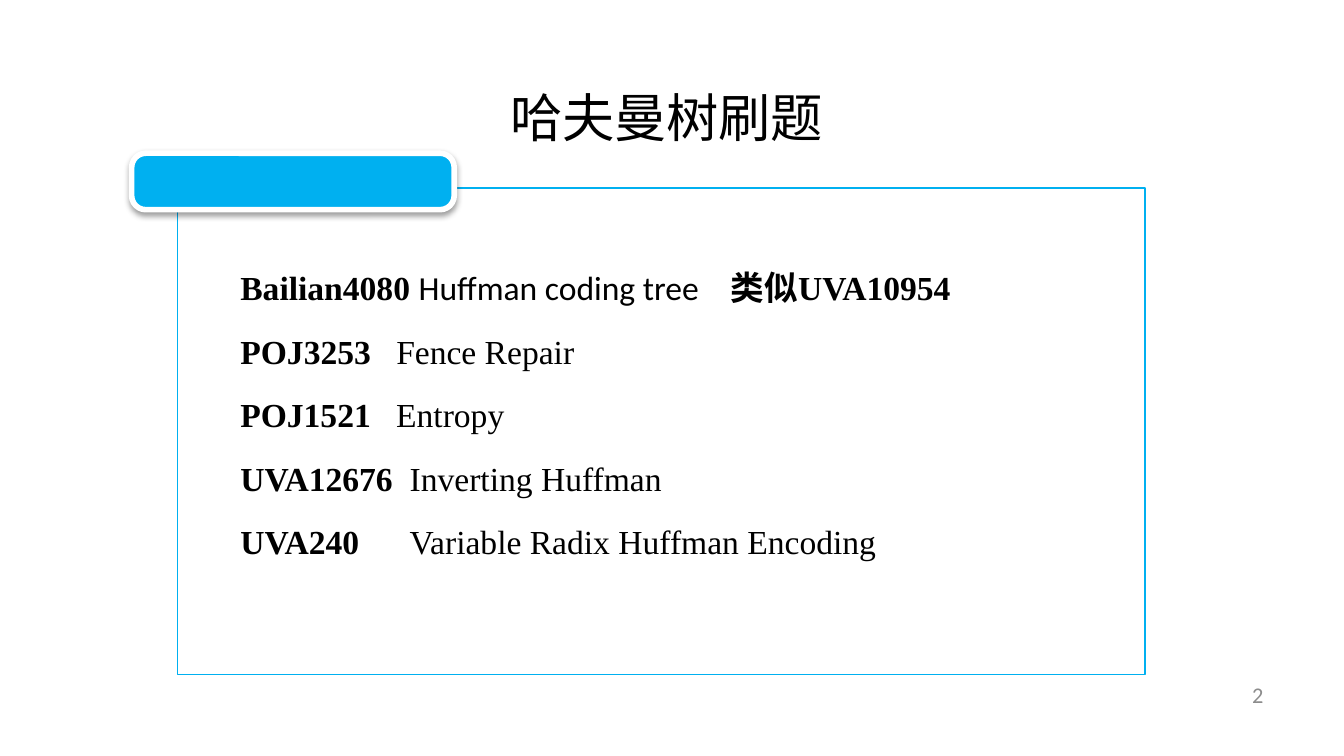
from lxml.etree import SubElement
from pptx import Presentation
from pptx.dml.color import RGBColor
from pptx.enum.shapes import MSO_SHAPE
from pptx.enum.text import MSO_ANCHOR, PP_ALIGN
from pptx.oxml.ns import qn
from pptx.util import Inches, Pt

COLORS = {"text": "000000", "accent": "00B0F0", "white": "FFFFFF", "number": "8C8C8C"}
SERIF, SANS, CJK = "Times New Roman", "Calibri", "Noto Sans CJK SC"

# Problem number, problem name, row width, tab position of the name (None: a plain space)
PROBLEMS = [
    ("Bailian4080", "Huffman coding tree", 3.7, None),
    ("POJ3253", "Fence Repair", 4.72, 1.16),
    ("POJ1521", "Entropy", 2.43, 1.16),
    ("UVA12676", "Inverting Huffman", 4.02, 1.26),
    ("UVA240", "Variable Radix Huffman Encoding", 5.28, 1.26),
]
ROW_LEFT, ROW_TOP, ROW_HEIGHT = 1.69, 1.94, 0.4
ROW_PITCH = (3.83 - ROW_TOP) / (len(PROBLEMS) - 1)


def rgb(name):
    return RGBColor.from_string(COLORS[name])


def style(font, size, name=None, color="text", bold=None):
    font.size, font.name, font.bold = Pt(size), name, bold
    font.color.rgb = rgb(color)


def set_east_asian(run, name):
    SubElement(run.font._element, qn("a:ea"), typeface=name)


def add_box(s, shape_type, box, fill, line, width):
    sp = s.shapes.add_shape(shape_type, *map(Inches, box))
    sp.shadow.inherit = False
    sp.fill.solid()
    sp.fill.fore_color.rgb = rgb(fill)
    sp.line.color.rgb = rgb(line)
    sp.line.width = Pt(width)
    return sp


def add_drop_shadow(sp):
    effects = sp._element.spPr.find(qn("a:effectLst"))
    shadow = SubElement(effects, qn("a:outerShdw"), blurRad=str(Pt(3.1)),
                        dist=str(Pt(1.6)), dir="5400000", rotWithShape="0")
    color = SubElement(shadow, qn("a:srgbClr"), val=COLORS["text"])
    SubElement(color, qn("a:alpha"), val="38000")


def add_textbox(s, box):
    tf = s.shapes.add_textbox(*map(Inches, box)).text_frame
    tf.word_wrap = True
    return tf


def add_run(p, text):
    r = p.add_run()
    r.text = text
    return r


def fill_title(sp, text):
    sp.left, sp.top, sp.width, sp.height = map(Inches, (3.31, 0.42, 3.3, 0.67))
    tf = sp.text_frame
    tf.vertical_anchor = MSO_ANCHOR.TOP
    p = tf.paragraphs[0]
    p.alignment = PP_ALIGN.CENTER
    p.line_spacing = 1.35
    style(p.font, 28, CJK)
    set_east_asian(add_run(p, text), CJK)


def add_problem(s, row, number, name, width, tab):
    top = ROW_TOP + row * ROW_PITCH
    p = add_textbox(s, (ROW_LEFT, top, width, ROW_HEIGHT)).paragraphs[0]
    if tab:
        tabs = SubElement(p._p.get_or_add_pPr(), qn("a:tabLst"))
        SubElement(tabs, qn("a:tab"), pos=str(Inches(tab)), algn="l")
    style(p.font, 18)
    for text, bold in ((number + ("\t" if tab else " "), True), (name, False)):
        font = add_run(p, text).font
        font.bold = bold
        font.name = SERIF if bold or tab else SANS


def add_related(s, text):
    p = add_textbox(s, (5.34, ROW_TOP, 1.84, ROW_HEIGHT)).paragraphs[0]
    style(p.font, 18, SERIF, bold=True)
    set_east_asian(add_run(p, text), CJK)


def add_slide_number(s, text):
    tf = add_textbox(s, (7.17, 5.02, 2.33, 0.3))
    tf.vertical_anchor = MSO_ANCHOR.MIDDLE
    p = tf.paragraphs[0]
    p.alignment = PP_ALIGN.RIGHT
    style(p.font, 12, SANS, "number")
    add_run(p, text)


def main():
    prs = Presentation()
    prs.slide_width = Inches(10)
    prs.slide_height = prs.slide_width * 9 // 16
    s = prs.slides.add_slide(prs.slide_layouts[5])

    # Title
    fill_title(s.shapes.title, "哈夫曼树刷题")

    # Frame with its label tab
    add_box(s, MSO_SHAPE.RECTANGLE, (1.32, 1.4, 7.2, 3.62), "white", "accent", 0.75)
    label = add_box(s, MSO_SHAPE.ROUNDED_RECTANGLE, (0.98, 1.14, 2.4, 0.42),
                    "accent", "white", 3)
    label.adjustments[0] = 0.25
    add_drop_shadow(label)

    # Problem rows and the related problem
    for row, problem in enumerate(PROBLEMS):
        add_problem(s, row, *problem)
    add_related(s, "类似UVA10954")

    # Slide number
    add_slide_number(s, "2")

    prs.save("out.pptx")


if __name__ == "__main__":
    main()
